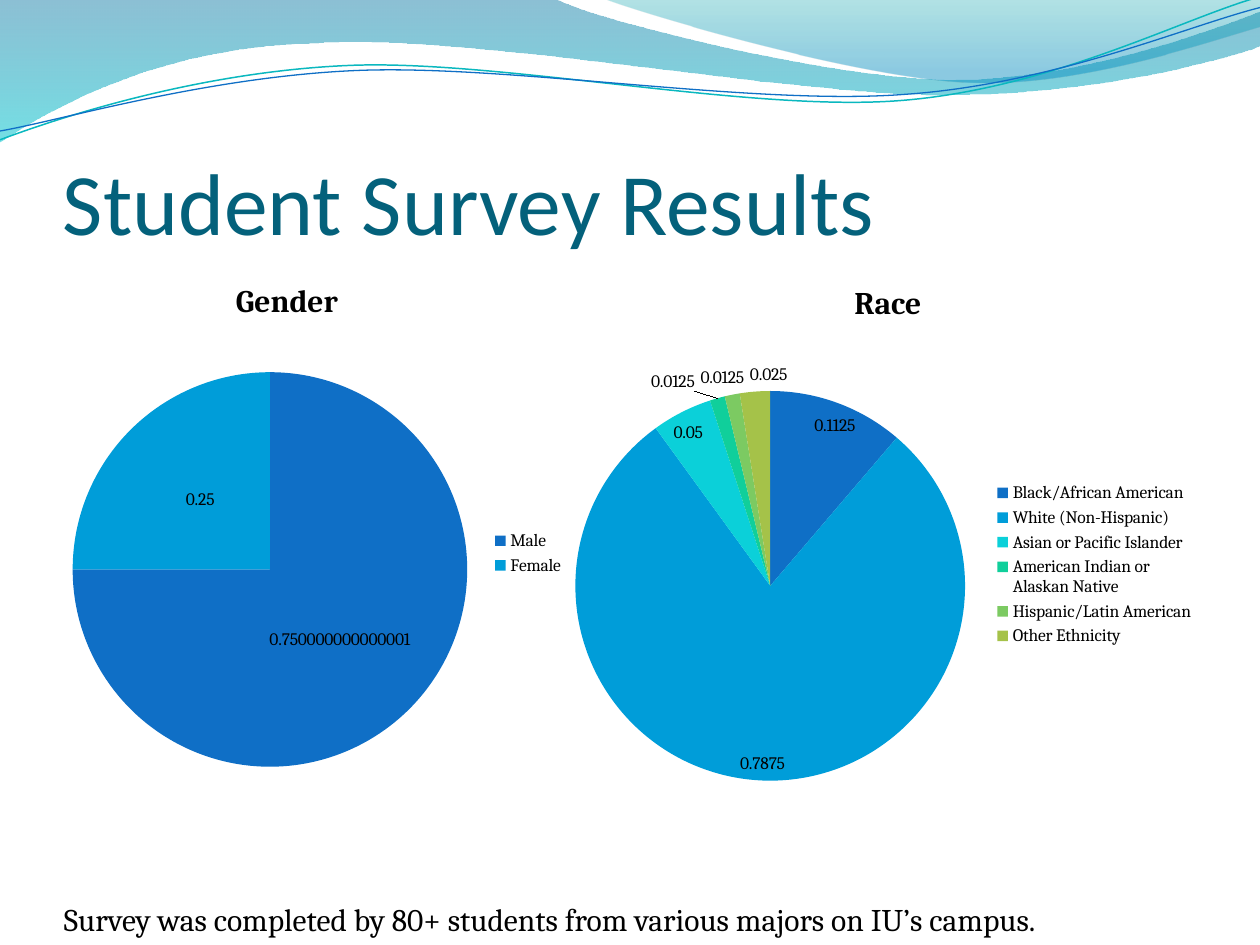
from dataclasses import dataclass
from lxml import etree
from pptx import Presentation
from pptx.chart.data import CategoryChartData
from pptx.dml.color import RGBColor
from pptx.enum import chart as ch, text
from pptx.oxml import parse_xml
from pptx.oxml.ns import nsdecls, qn
from pptx.util import Inches, Pt

COLORS = {
    "title": "04617B", "text": "000000",
    "blue": "0F6FC6", "sky": "009DD9", "cyan": "0BD0D9",
    "green": "10CF9B", "lime": "7CCA62", "olive": "A5C249",
    "teal_line": "0AB8BF", "wave_top": "0074A1", "wave_end": "00C6CF",
    "crest_top": "00A1A9", "crest_end": "008BBF",
}
SLICES = ["blue", "sky", "cyan", "green", "lime", "olive"]


@dataclass
class Wave:
    start: tuple
    segments: list
    stops: tuple = ()
    line: str = ""
    width: float = 0


@dataclass
class Pie:
    title: str
    box: tuple
    plot: tuple
    title_at: tuple
    values: dict
    label_position: ch.XL_LABEL_POSITION


WAVES = [
    Wave((0, 0), [(4.4, -0.01), (4.76, 0.17, 6.64, 0.63, 7.58, 0.63),
                  (8.53, 0.63, 9.58, 0.26, 10, 0.09), (10.01, 0.36),
                  (9.83, 0.44, 8.7, 0.76, 7.46, 0.75),
                  (6.22, 0.75, 3.82, 0.28, 2.57, 0.34),
                  (1.29, 0.36, 0.46, 0.83, -0.01, 1.13)],
         stops=((0, "wave_top", 45), (100, "wave_end", 55))),
    Wave((4.79, -0.01), [(5.09, 0.11, 6.82, 0.62, 7.69, 0.65),
                         (8.56, 0.69, 9.61, 0.32, 10, 0.21), (10, 0)],
         stops=((0, "crest_top", 30), (80, "crest_end", 45))),
    Wave((0, 1.11), [(0.48, 0.93, 1.58, 0.57, 2.77, 0.52),
                     (3.95, 0.47, 5.93, 0.89, 7.13, 0.8),
                     (8.33, 0.71, 9.38, 0.15, 9.98, -0.02)],
         line="teal_line", width=0.85),
    Wave((0, 1.04), [(0.47, 0.96, 1.64, 0.61, 2.83, 0.56),
                     (4.03, 0.51, 5.97, 0.84, 7.17, 0.75),
                     (8.36, 0.67, 9.41, 0.21, 10, 0.06)],
         line="blue", width=0.75),
]

PIES = [
    Pie("Gender", (0.41, 1.93, 4.17, 4.92), (0.04, 0.172, 0.751, 0.709),
        (0.34, 0.05), {"Male": 0.750000000000001, "Female": 0.25},
        ch.XL_LABEL_POSITION.CENTER),
    Pie("Race", (4.41, 1.94, 5.17, 5.08), (0.03, 0.229, 0.599, 0.609),
        (0.45, 0.05),
        {"Black/African American": 0.1125, "White (Non-Hispanic)": 0.7875,
         "Asian or Pacific Islander": 0.05,
         "American Indian or Alaskan Native": 0.0125,
         "Hispanic/Latin American": 0.0125, "Other Ethnicity": 0.025},
        ch.XL_LABEL_POSITION.BEST_FIT),
]


def rgb(name: str) -> RGBColor:
    return RGBColor.from_string(COLORS[name])


def gradient(stops: tuple) -> etree.ElementBase:
    marks = "".join(
        f'<a:gs pos="{pos * 1000}"><a:srgbClr val="{COLORS[name]}">'
        f'<a:alpha val="{alpha * 1000}"/></a:srgbClr></a:gs>'
        for pos, name, alpha in stops)
    return parse_xml(f'<a:gradFill {nsdecls("a")} rotWithShape="1"><a:gsLst>{marks}'
                     '</a:gsLst><a:lin ang="5400000" scaled="0"/></a:gradFill>')


def bend(sp, segments: list) -> None:
    lines = iter(list(sp.element.iter(qn("a:lnTo"))))
    for seg in segments:
        group = [next(lines) for _ in range(len(seg) // 2)]
        if len(group) == 3:
            curve = parse_xml(f'<a:cubicBezTo {nsdecls("a")}/>')
            group[0].addprevious(curve)
            for line in group:
                curve.append(line[0])
                line.getparent().remove(line)


def add_wave(s, wave: Wave) -> None:
    nodes = [(Inches(seg[i]), Inches(seg[i + 1]))
             for seg in wave.segments for i in range(0, len(seg), 2)]
    builder = s.shapes.build_freeform(*map(Inches, wave.start), scale=1.0)
    builder.add_line_segments(nodes, close=bool(wave.stops))
    sp = builder.convert_to_shape()
    bend(sp, wave.segments)
    sp.shadow.inherit = False
    sp.fill.background()
    if wave.stops:
        sp.line.fill.background()
        no_fill = sp.element.spPr.find(qn("a:noFill"))
        sp.element.spPr.replace(no_fill, gradient(wave.stops))
    else:
        sp.line.color.rgb = rgb(wave.line)
        sp.line.width = Pt(wave.width)


def add_text(s, box: tuple, words: str, size: int, font: str, color: str):
    sp = s.shapes.add_textbox(*map(Inches, box))
    tf = sp.text_frame
    tf.word_wrap = True
    tf.text = words
    r = tf.paragraphs[0].runs[0]
    r.font.size, r.font.name = Pt(size), font
    r.font.color.rgb = rgb(color)
    return tf


def set_layout(parent, index: int, values: tuple, inner: bool = False) -> None:
    for old in parent.findall(qn("c:layout")):
        parent.remove(old)
    names = ("x", "y", "w", "h")[:len(values)]
    target = '<c:layoutTarget val="inner"/>' if inner else ""
    modes = "".join(f'<c:{n}Mode val="edge"/>' for n in names[:2])
    sizes = "".join(f'<c:{n} val="{v}"/>' for n, v in zip(names, values))
    parent.insert(index, parse_xml(
        f'<c:layout {nsdecls("c")}><c:manualLayout>{target}{modes}{sizes}'
        '</c:manualLayout></c:layout>'))


def add_pie(s, pie: Pie) -> None:
    data = CategoryChartData()
    data.categories = list(pie.values)
    data.add_series("Series 1", list(pie.values.values()))
    chart = s.shapes.add_chart(ch.XL_CHART_TYPE.PIE,
                               *map(Inches, pie.box), data).chart
    chart.font.size, chart.font.name = Pt(10), "Cambria"
    chart.font.color.rgb = rgb("text")

    chart.has_title = True
    tf = chart.chart_title.text_frame
    tf.text = pie.title
    font = tf.paragraphs[0].runs[0].font
    font.size, font.bold, font.name = Pt(18), True, "Cambria"
    font.color.rgb = rgb("text")
    chart.chart_title.include_in_layout = False
    set_layout(tf._element.getparent().getparent(), 1, pie.title_at)

    chart.has_legend = True
    chart.legend.position = ch.XL_LEGEND_POSITION.RIGHT
    chart.legend.include_in_layout = False

    plot = chart.plots[0]
    plot.vary_by_categories = True
    plot.has_data_labels = True
    labels = plot.data_labels
    labels.show_value, labels.show_percentage = True, False
    labels.number_format, labels.number_format_is_linked = "General", False
    labels.position = pie.label_position
    for i, name in enumerate(SLICES[:len(pie.values)]):
        fill = plot.series[0].points[i].format.fill
        fill.solid()
        fill.fore_color.rgb = rgb(name)
    set_layout(plot._element.getparent(), 0, pie.plot, inner=True)


def main() -> None:
    prs = Presentation()
    prs.slide_width, prs.slide_height = Inches(10), Inches(7.5)
    s = prs.slides.add_slide(prs.slide_layouts[6])
    for wave in WAVES:
        add_wave(s, wave)
    tf = add_text(s, (0.5, 0.76, 9, 1.25), "Student Survey Results",
                  50, "Calibri", "title")
    tf.vertical_anchor = text.MSO_ANCHOR.BOTTOM
    tf.margin_left = tf.margin_right = tf.margin_bottom = 0
    add_text(s, (0.41, 7.09, 9, 0.4),
             "Survey was completed by 80+ students from various majors on IU’s campus.",
             18, "Cambria", "text")
    for pie in PIES:
        add_pie(s, pie)
    prs.save("out.pptx")


if __name__ == "__main__":
    main()
